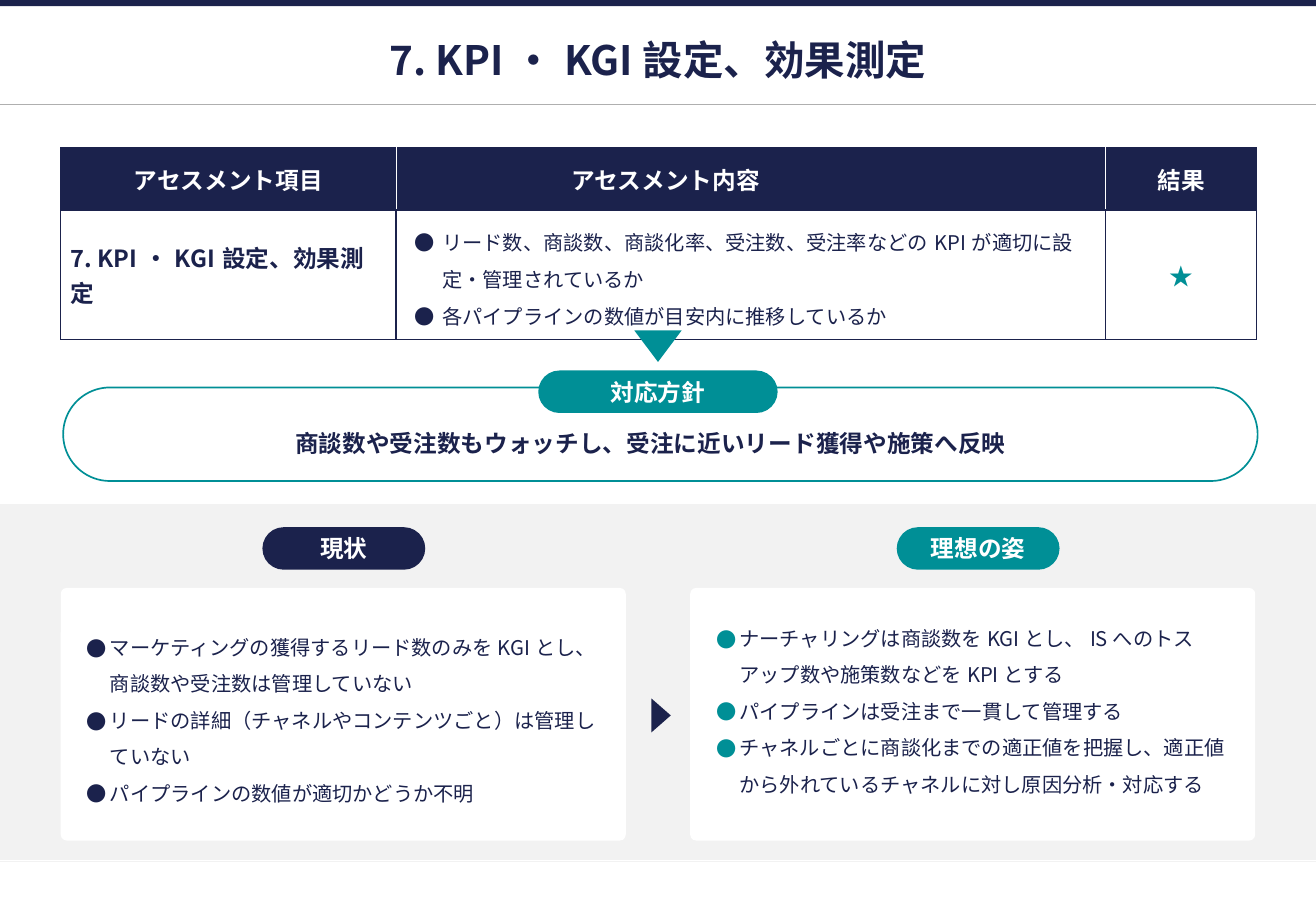
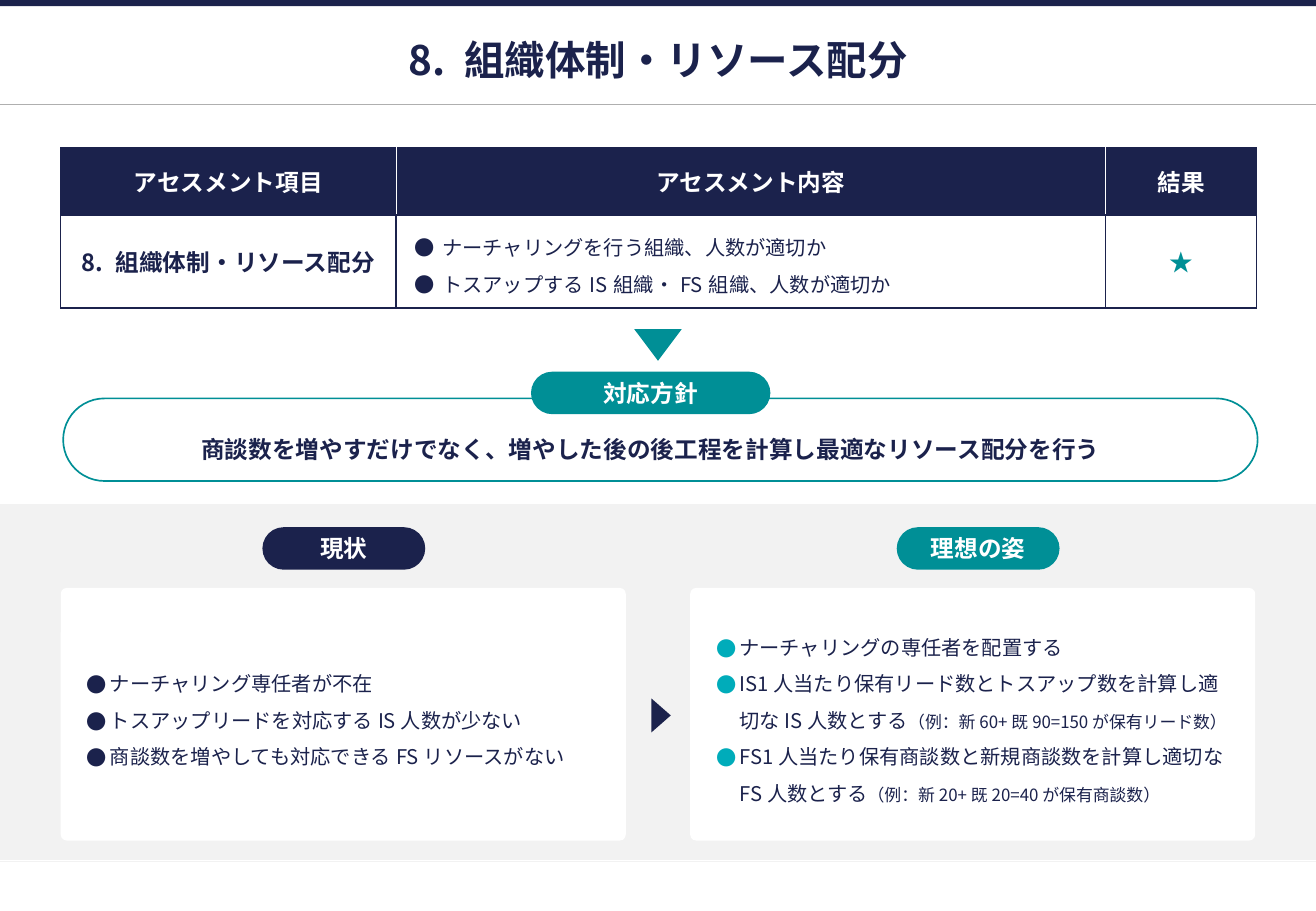
from dataclasses import dataclass

from lxml.etree import SubElement
from pptx import Presentation
from pptx.dml.color import RGBColor
from pptx.enum.shapes import MSO_CONNECTOR, MSO_SHAPE
from pptx.enum.text import MSO_ANCHOR, MSO_AUTO_SIZE, PP_ALIGN
from pptx.oxml.ns import qn
from pptx.util import Inches, Pt


@dataclass(frozen=True)
class Theme:
    navy: str = "1B224C"
    teal: str = "008F96"
    aqua: str = "00ACBA"
    white: str = "FFFFFF"
    band: str = "F2F2F2"
    rule: str = "AFAFAF"
    font: str = "Noto Sans CJK JP"
    title: int = 24
    heading: int = 14
    body: int = 12
    note: int = 10


THEME = Theme()
WIDTH, HEIGHT = 10.83, 7.5
MARGIN = 0.5
CONTENT_WIDTH = WIDTH - 2 * MARGIN
COLUMNS = (2.76, 5.84, 1.24)
HEADERS = ("アセスメント項目", "アセスメント内容", "結果")
PANEL_WIDTH, PANEL_TOP, PANEL_HEIGHT = 4.65, 4.84, 2.08
BAND_TOP, BAND_BOTTOM = 4.15, 7.08
PILL_HEIGHT = 0.35
LEFT, CENTER = PP_ALIGN.LEFT, PP_ALIGN.CENTER
TOP, MIDDLE = MSO_ANCHOR.TOP, MSO_ANCHOR.MIDDLE

SLIDES = [
    {
        "title": "7. KPI・KGI設定、効果測定",
        "item_align": LEFT,
        "header_indent": 1.36,
        "rows": (0.51, 0.64),
        "checks": [
            "リード数、商談数、商談化率、受注数、受注率などのKPIが適切に設定・管理されているか",
            "各パイプラインの数値が目安内に推移しているか",
        ],
        "policy": "商談数や受注数もウォッチし、受注に近いリード獲得や施策へ反映",
        "policy_space": 0,
        "policy_text_top": 3.37,
        "frame_top": 3.19,
        "arrow_top": 2.72,
        "policy_pill": (4.43, 3.05),
        "current": [
            ["マーケティングの獲得するリード数のみをKGIとし、商談数や受注数は管理していない"],
            ["リードの詳細（チャネルやコンテンツごと）は管理していない"],
            ["パイプラインの数値が適切かどうか不明"],
        ],
        "ideal": [
            ["ナーチャリングは商談数をKGIとし、ISへのトスアップ数や施策数などをKPIとする"],
            ["パイプラインは受注まで一貫して管理する"],
            ["チャネルごとに商談化までの適正値を把握し、適正値から外れているチャネルに対し原因分析・対応する"],
        ],
        "ideal_anchor": TOP,
        "ideal_bullet": THEME.teal,
    },
    {
        "title": "8. 組織体制・リソース配分",
        "item_align": CENTER,
        "header_indent": 0,
        "rows": (0.55, 0.76),
        "checks": [
            "ナーチャリングを行う組織、人数が適切か",
            "トスアップするIS組織・FS組織、人数が適切か",
        ],
        "policy": "商談数を増やすだけでなく、増やした後の後工程を計算し最適なリソース配分を行う",
        "policy_space": 4,
        "policy_text_top": 3.42,
        "frame_top": 3.28,
        "arrow_top": 2.71,
        "policy_pill": (4.37, 3.06),
        "current": [
            ["ナーチャリング専任者が不在"],
            ["トスアップリードを対応するIS人数が少ない"],
            ["商談数を増やしても対応できるFSリソースがない"],
        ],
        "ideal": [
            ["ナーチャリングの専任者を配置する"],
            ["IS1人当たり保有リード数とトスアップ数を計算し適切なIS人数とする",
             "（例：新60+既90=150が保有リード数）"],
            ["FS1人当たり保有商談数と新規商談数を計算し適切なFS人数とする",
             "（例：新20+既20=40が保有商談数）"],
        ],
        "ideal_anchor": MIDDLE,
        "ideal_bullet": THEME.aqua,
    },
]


def color(value):
    return RGBColor.from_string(value)


def add_run(paragraph, text, size, ink, bold=False):
    run = paragraph.add_run()
    run.text = text
    font = run.font
    font.size, font.bold, font.name = Pt(size), bold, THEME.font
    font.color.rgb = color(ink)
    SubElement(font._element, qn("a:ea"), typeface=THEME.font)


def set_indent(paragraph, left, first=0.0):
    properties = paragraph._p.get_or_add_pPr()
    properties.set("marL", str(Inches(left)))
    properties.set("indent", str(Inches(first)))
    return properties


def write_line(frame, text, size, ink, align=CENTER):
    paragraph = frame.paragraphs[0]
    paragraph.alignment = align
    add_run(paragraph, text, size, ink, bold=True)
    return paragraph


def write_bullets(frame, items, bullet, left, hanging, spacing):
    for index, (text, *notes) in enumerate(items):
        paragraph = frame.add_paragraph() if index else frame.paragraphs[0]
        paragraph.alignment = LEFT
        paragraph.line_spacing = spacing
        properties = set_indent(paragraph, left, -hanging)
        bullet_color = SubElement(properties, qn("a:buClr"))
        SubElement(bullet_color, qn("a:srgbClr"), val=bullet)
        SubElement(properties, qn("a:buFont"), typeface=THEME.font)
        SubElement(properties, qn("a:buChar"), char="●")
        add_run(paragraph, text, THEME.body, THEME.navy)
        for note in notes:
            add_run(paragraph, note, THEME.note, THEME.navy)


def set_frame(frame, horizontal, vertical, anchor=MIDDLE):
    frame.word_wrap = True
    frame.auto_size = MSO_AUTO_SIZE.NONE
    frame.vertical_anchor = anchor
    frame.margin_left = frame.margin_right = Inches(horizontal)
    frame.margin_top = frame.margin_bottom = Inches(vertical)
    return frame


def add_block(slide, kind, box, fill, line=None, radius=None, rotation=0):
    shape = slide.shapes.add_shape(kind, *map(Inches, box))
    shape.shadow.inherit = False
    shape.fill.solid()
    shape.fill.fore_color.rgb = color(fill)
    if line:
        shape.line.color.rgb = color(line)
        shape.line.width = Pt(1)
    else:
        shape.line.fill.background()
    if radius is not None:
        shape.adjustments[0] = radius
    shape.rotation = rotation
    return shape


def add_pill(slide, text, left, top, width, fill):
    pill = add_block(slide, MSO_SHAPE.ROUNDED_RECTANGLE,
                     (left, top, width, PILL_HEIGHT), fill, radius=0.5)
    write_line(set_frame(pill.text_frame, 0.1, 0.05), text, THEME.heading, THEME.white)


def add_rule(slide, top, ink):
    rule = slide.shapes.add_connector(
        MSO_CONNECTOR.STRAIGHT, 0, Inches(top), Inches(WIDTH), Inches(top))
    rule.line.color.rgb = color(ink)
    rule.line.width = Pt(0.75)
    SubElement(rule._element.spPr, qn("a:effectLst"))
    return rule


def decorate_layout(layout, slide):
    for placeholder in list(layout.placeholders)[1:]:
        layout.shapes.element.remove(placeholder.element)
    parts = [
        add_rule(slide, 7.09, THEME.band),
        add_block(slide, MSO_SHAPE.RECTANGLE, (0, 0, WIDTH, 0.05), THEME.navy),
        add_rule(slide, 0.86, THEME.rule),
    ]
    for part in parts:
        layout.shapes.element.append(part._element)


def add_title(slide, text):
    title = slide.shapes.title
    title.left, title.top, title.width, title.height = map(
        Inches, (MARGIN, 0.29, CONTENT_WIDTH, 0.39))
    write_line(set_frame(title.text_frame, 0.04, 0.04), text, THEME.title, THEME.navy)


def style_cell(cell, fill, borders):
    properties = cell._tc.get_or_add_tcPr()
    for side, (ink, width) in zip("LRTB", borders):
        border = SubElement(properties, qn(f"a:ln{side}"), w=str(Pt(width)))
        solid = SubElement(border, qn("a:solidFill"))
        SubElement(solid, qn("a:srgbClr"), val=ink)
    cell.fill.solid()
    cell.fill.fore_color.rgb = color(fill)
    cell.vertical_anchor = MIDDLE
    cell.margin_left = cell.margin_right = Inches(0.08)
    cell.margin_top = cell.margin_bottom = Inches(0.08)


def add_assessment(slide, content):
    rows = content["rows"]
    table = slide.shapes.add_table(
        len(rows), len(COLUMNS),
        *map(Inches, (MARGIN, 1.22, CONTENT_WIDTH, sum(rows)))).table
    table.horz_banding = False
    for column, width in zip(table.columns, COLUMNS):
        column.width = Inches(width)
    for row, height in zip(table.rows, rows):
        row.height = Inches(height)

    outer, inner = (THEME.navy, 1), (THEME.white, 0.75)
    last = len(COLUMNS) - 1
    for index, header in enumerate(HEADERS):
        cell = table.cell(0, index)
        style_cell(cell, THEME.navy, (inner if index else outer,
                                      inner if index < last else outer, outer, outer))
        shifted = index == 1 and content["header_indent"]
        paragraph = write_line(cell.text_frame, header, THEME.heading, THEME.white,
                               LEFT if shifted else CENTER)
        if shifted:
            set_indent(paragraph, content["header_indent"])
        style_cell(table.cell(1, index), THEME.white, [outer] * 4)

    item, checks, result = (table.cell(1, index).text_frame for index in range(3))
    write_line(item, content["title"], THEME.heading, THEME.navy, content["item_align"])
    write_bullets(checks, [[check] for check in content["checks"]],
                  THEME.navy, 0.3, 0.23, 1.25)
    write_line(result, "★", THEME.heading, THEME.teal)


def add_policy(slide, content):
    top = content["frame_top"]
    add_block(slide, MSO_SHAPE.ROUNDED_RECTANGLE, (0.52, top, CONTENT_WIDTH, 3.96 - top),
              THEME.white, line=THEME.teal, radius=0.5)
    add_block(slide, MSO_SHAPE.ISOSCELES_TRIANGLE,
              ((WIDTH - 0.39) / 2, content["arrow_top"], 0.39, 0.26),
              THEME.teal, rotation=180)
    box = slide.shapes.add_textbox(
        *map(Inches, (0.61, content["policy_text_top"], 9.49, 0.55)))
    paragraph = write_line(set_frame(box.text_frame, 0.1, 0.1), content["policy"],
                           THEME.heading, THEME.navy)
    if content["policy_space"]:
        paragraph.space_before = paragraph.space_after = Pt(content["policy_space"])
    add_pill(slide, "対応方針", *content["policy_pill"], 1.97, THEME.teal)


def add_comparison(slide, content):
    add_block(slide, MSO_SHAPE.RECTANGLE,
              (0, BAND_TOP, WIDTH, BAND_BOTTOM - BAND_TOP), THEME.band)
    panels = [
        ("現状", 2.16, THEME.navy, MARGIN, content["current"], THEME.navy, MIDDLE),
        ("理想の姿", 7.38, THEME.teal, WIDTH - MARGIN - PANEL_WIDTH,
         content["ideal"], content["ideal_bullet"], content["ideal_anchor"]),
    ]
    for label, pill_left, fill, left, items, bullet, anchor in panels:
        panel = add_block(slide, MSO_SHAPE.ROUNDED_RECTANGLE,
                          (left, PANEL_TOP, PANEL_WIDTH, PANEL_HEIGHT),
                          THEME.white, radius=0.024)
        write_bullets(set_frame(panel.text_frame, 0.2, 0.2, anchor),
                      items, bullet, 0.19, 0.19, 1.5)
        add_pill(slide, label, pill_left, 4.34, 1.34, fill)
    add_block(slide, MSO_SHAPE.ISOSCELES_TRIANGLE, (5.3, 5.81, 0.28, 0.16),
              THEME.navy, rotation=90)


def main():
    presentation = Presentation()
    presentation.slide_width, presentation.slide_height = Inches(WIDTH), Inches(HEIGHT)
    layout = presentation.slide_layouts.get_by_name("Title Only")
    for index, content in enumerate(SLIDES):
        slide = presentation.slides.add_slide(layout)
        if index == 0:
            decorate_layout(layout, slide)
        add_title(slide, content["title"])
        add_comparison(slide, content)
        add_assessment(slide, content)
        add_policy(slide, content)
    presentation.save("out.pptx")


if __name__ == "__main__":
    main()
